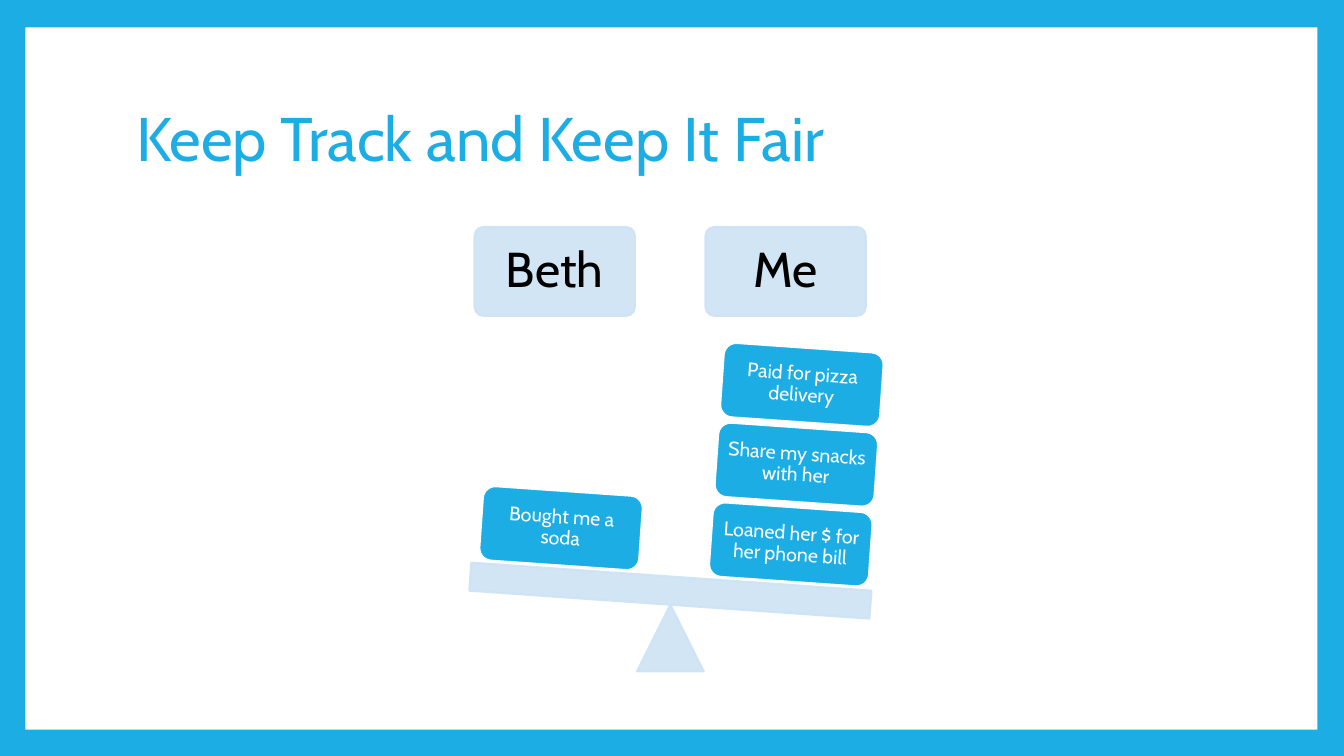
import pptx
import pptx.dml.color
import pptx.enum.shapes
import pptx.enum.text
import pptx.oxml.ns
import pptx.util
import lxml.etree

SHAPE = pptx.enum.shapes.MSO_SHAPE
BLUE, PALE, WHITE, BLACK = "1CADE4", "CDE3F5", "FFFFFF", "000000"
TILT = 4
BLOCK_W, BLOCK_H = 4.04, 1.88


def rgb(color):
    return pptx.dml.color.RGBColor.from_string(color)


def paint(fill, color):
    fill.solid()
    fill.fore_color.rgb = rgb(color)


def set_opacity(sp, percent):
    """Make the fill and line of a shape see-through."""
    for color in sp.element.spPr.iter(pptx.oxml.ns.qn("a:srgbClr")):
        alpha = lxml.etree.SubElement(color, pptx.oxml.ns.qn("a:alpha"))
        alpha.set("val", str(percent * 1000))


def add_shape(s, kind, box, fill, line=None, opacity=100, rotation=0):
    sp = s.shapes.add_shape(kind, *map(pptx.util.Cm, box))
    sp.shadow.inherit = False
    sp.rotation = rotation
    paint(sp.fill, fill)
    if line:
        sp.line.width = pptx.util.Pt(1.5)
        paint(sp.line.fill, line)
    else:
        sp.line.fill.background()
    if opacity < 100:
        set_opacity(sp, opacity)
    return sp


def write(sp, text, size, color, inset, align=pptx.enum.text.PP_ALIGN.CENTER):
    tf = sp.text_frame
    tf.word_wrap = True
    tf.vertical_anchor = pptx.enum.text.MSO_ANCHOR.MIDDLE
    tf.margin_left = tf.margin_right = pptx.util.Cm(inset)
    tf.margin_top = tf.margin_bottom = pptx.util.Cm(inset)
    tf.text = text
    p = tf.paragraphs[0]
    p.alignment = align
    p.line_spacing = 0.9
    font = p.runs[0].font
    font.name = "Cabin"
    font.size = pptx.util.Pt(size)
    font.color.rgb = rgb(color)


def add_frame(s, box):
    """Blue background with a white panel that leaves a border."""
    paint(s.background.fill, BLUE)
    add_shape(s, SHAPE.RECTANGLE, box, WHITE)


def add_title(s, box, text):
    sp = s.shapes.add_textbox(*map(pptx.util.Cm, box))
    write(sp, text, 44, BLUE, 0.25, pptx.enum.text.PP_ALIGN.LEFT)


def add_header(s, left, top, name):
    sp = add_shape(s, SHAPE.ROUNDED_RECTANGLE, (left, top, BLOCK_W, 2.24),
                   PALE, PALE, 90)
    sp.adjustments[0] = 0.1
    write(sp, name, 35, BLACK, 0.38)


def add_stack(s, left, top, favors):
    """Pile tilted blocks upwards from the lowest one at left, top."""
    for i, favor in enumerate(favors):
        box = (left + 0.14 * i, top - 2.01 * i, BLOCK_W, BLOCK_H)
        sp = add_shape(s, SHAPE.ROUNDED_RECTANGLE, box, BLUE, WHITE,
                       rotation=TILT)
        write(sp, favor, 14, WHITE, 0.15)


def add_seesaw(s, box, people):
    left, top, width, height = box
    side = 1.68
    add_shape(s, SHAPE.ISOSCELES_TRIANGLE,
              (left + (width - side) / 2, top + height - side, side, side),
              PALE, PALE, 90)
    add_shape(s, SHAPE.RECTANGLE, (left, top + 8.81, width, 0.71),
              PALE, PALE, 90, TILT)
    for i, (name, favors) in enumerate(people):
        add_header(s, left + 0.12 + 5.82 * i, top, name)
        add_stack(s, left + 0.28 + 5.79 * i, top + 6.65 + 0.41 * i, favors)


def main():
    prs = pptx.Presentation()
    prs.slide_width = pptx.util.Cm(33.87)
    prs.slide_height = pptx.util.Cm(19.05)
    s = prs.slides.add_slide(prs.slide_layouts[6])
    add_frame(s, (0.64, 0.69, 32.56, 17.7))
    add_title(s, (3.18, 1.7, 27.43, 3.76), "Keep Track and Keep It Fair")
    add_seesaw(s, (11.84, 5.72, 10.11, 11.2), [
        ("Beth", ["Bought me a soda"]),
        ("Me", ["Loaned her $ for her phone bill",
                "Share my snacks with her",
                "Paid for pizza delivery"]),
    ])
    prs.save("out.pptx")


if __name__ == "__main__":
    main()
